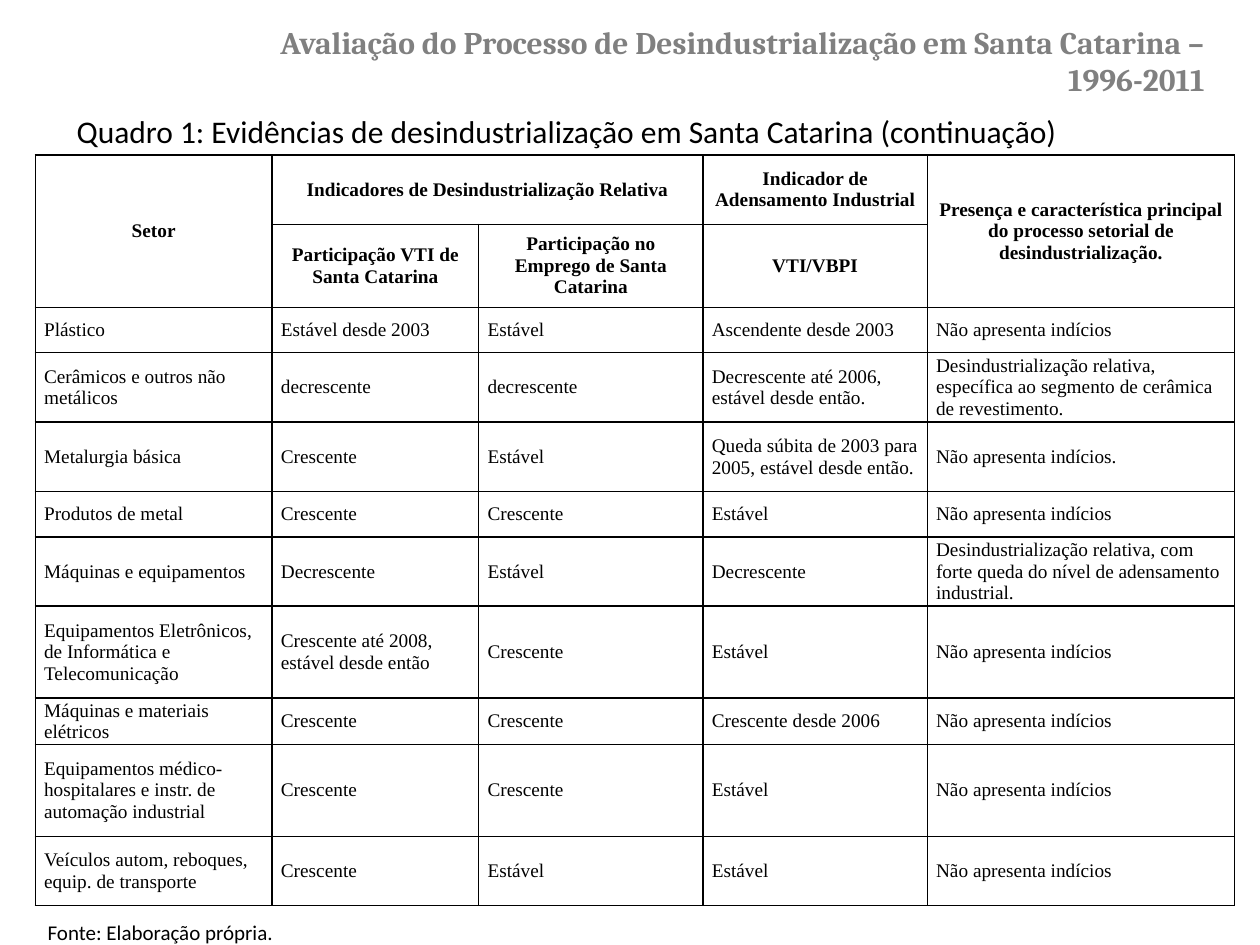
from dataclasses import dataclass

from lxml import etree
from pptx import Presentation
from pptx.dml.color import RGBColor
from pptx.enum import text
from pptx.oxml import ns
from pptx.util import Inches, Pt


@dataclass(frozen=True)
class Theme:
    """Hold the colours, fonts and sizes of the slide."""
    ink: str = "000000"
    grey: str = "808080"
    head: str = "Cambria"
    body: str = "Calibri"
    grid: str = "Times New Roman"
    large: int = 18
    note: int = 12
    cell: int = 11
    gap: int = 6
    line: int = 1


THEME = Theme()
ALIGN = text.PP_ALIGN
MIDDLE = text.MSO_ANCHOR.MIDDLE
FIT = text.MSO_AUTO_SIZE

COLS = [1.88, 1.64, 1.78, 1.78, 2.44]
ROWS = [0.55, 0.66, 0.36, 0.55, 0.55, 0.36, 0.55, 0.73, 0.36, 0.73, 0.55]
HEADS = 2
SPANS = [(0, 0, 1, 0), (0, 1, 0, 2), (0, 4, 1, 4)]
NONE = "Não apresenta indícios"
UP, DOWN, FLAT = "Crescente", "Decrescente", "Estável"
DATA = [
    ["Setor", "Indicadores de Desindustrialização Relativa", "",
     "Indicador de Adensamento Industrial",
     "Presença e característica principal do processo setorial de "
     "desindustrialização."],
    ["", "Participação VTI de Santa Catarina",
     "Participação no Emprego de Santa Catarina", "VTI/VBPI", ""],
    ["Plástico", "Estável desde 2003", FLAT, "Ascendente desde 2003", NONE],
    ["Cerâmicos e outros não metálicos", "decrescente", "decrescente",
     "Decrescente até 2006, estável desde então.",
     "Desindustrialização relativa, específica ao segmento de cerâmica "
     "de revestimento."],
    ["Metalurgia básica", UP, FLAT,
     "Queda súbita de 2003 para 2005, estável desde então.",
     "Não apresenta indícios."],
    ["Produtos de metal", UP, UP, FLAT, NONE],
    ["Máquinas e equipamentos", DOWN, FLAT, DOWN,
     "Desindustrialização relativa, com forte queda do nível de "
     "adensamento industrial."],
    ["Equipamentos Eletrônicos, de Informática e Telecomunicação",
     "Crescente até 2008, estável desde então", UP, FLAT, NONE],
    ["Máquinas e materiais elétricos", UP, UP, "Crescente desde 2006", NONE],
    ["Equipamentos médico-hospitalares e instr. de automação industrial",
     UP, UP, FLAT, NONE],
    ["Veículos autom, reboques, equip. de transporte", UP, FLAT, FLAT, NONE],
]


def assign(item, values):
    """Set each attribute of an item from a dict."""
    for name, value in values.items():
        setattr(item, name, value)


def write(frame, words, face, size, color, bold=False, align=ALIGN.LEFT):
    """Write one formatted paragraph in a text frame."""
    para = frame.paragraphs[0]
    para.alignment = align
    run = para.add_run()
    run.text = words
    assign(run.font, {"name": face, "size": Pt(size), "bold": bold})
    run.font.color.rgb = RGBColor.from_string(color)
    return para


def edge(cell):
    """Draw a line on the four sides of a cell."""
    props = cell._tc.get_or_add_tcPr()
    for spot, side in enumerate(("lnL", "lnR", "lnT", "lnB")):
        line = etree.Element(ns.qn(f"a:{side}"), w=str(Pt(THEME.line)))
        fill = etree.SubElement(line, ns.qn("a:solidFill"))
        etree.SubElement(fill, ns.qn("a:srgbClr"), val=THEME.ink)
        props.insert(spot, line)


def place(item, box):
    """Move an item to a box of left, top, width and height."""
    names = ("left", "top", "width", "height")
    assign(item, dict(zip(names, map(Inches, box))))


def title(slide, box):
    """Fill the title placeholder."""
    shape = slide.shapes.title
    place(shape, box)
    frame = shape.text_frame
    assign(frame, {"word_wrap": True, "auto_size": FIT.NONE,
                   "vertical_anchor": MIDDLE})
    write(frame, "Avaliação do Processo de Desindustrialização em "
          "Santa Catarina – 1996-2011", THEME.head, THEME.large,
          THEME.grey, True, ALIGN.RIGHT)


def label(slide, box, words, size):
    """Add a line of plain text."""
    shape = slide.shapes.add_textbox(*map(Inches, box))
    assign(shape.text_frame, {"word_wrap": True,
                              "auto_size": FIT.SHAPE_TO_FIT_TEXT})
    write(shape.text_frame, words, THEME.body, size, THEME.ink)


def matrix(slide, box):
    """Add the table of sectors and indicators."""
    shape = slide.shapes.add_table(len(ROWS), len(COLS), *map(Inches, box))
    table = shape.table
    assign(table, {"first_row": False, "horz_banding": False})
    for col, width in zip(table.columns, COLS):
        col.width = Inches(width)
    for row, height in zip(table.rows, ROWS):
        row.height = Inches(height)
    for top, left, low, right in SPANS:
        table.cell(top, left).merge(table.cell(low, right))
    for r, line in enumerate(DATA):
        head = r < HEADS
        for c, words in enumerate(line):
            cell = table.cell(r, c)
            assign(cell, {"vertical_anchor": MIDDLE,
                          "margin_left": Inches(0.07),
                          "margin_right": Inches(0.07),
                          "margin_top": 0, "margin_bottom": 0})
            cell.fill.background()
            edge(cell)
            if words:
                para = write(cell.text_frame, words, THEME.grid, THEME.cell,
                             THEME.ink, head,
                             ALIGN.CENTER if head else ALIGN.LEFT)
                para.space_before = Pt(THEME.gap)


def main():
    """Build and save the slide."""
    deck = Presentation()
    assign(deck, {"slide_width": Inches(10), "slide_height": Inches(7.5)})
    slide = deck.slides.add_slide(deck.slide_layouts.get_by_name("Title Only"))
    title(slide, (2.09, 0.21, 7.57, 0.54))
    label(slide, (0.51, 0.84, 9.13, 0.4),
          "Quadro 1: Evidências de desindustrialização em Santa Catarina "
          "(continuação)", THEME.large)
    matrix(slide, (0.28, 1.23, sum(COLS), sum(ROWS)))
    label(slide, (0.28, 7.25, 3.78, 0.3), "Fonte: Elaboração própria.",
          THEME.note)
    deck.save("out.pptx")


if __name__ == "__main__":
    main()
